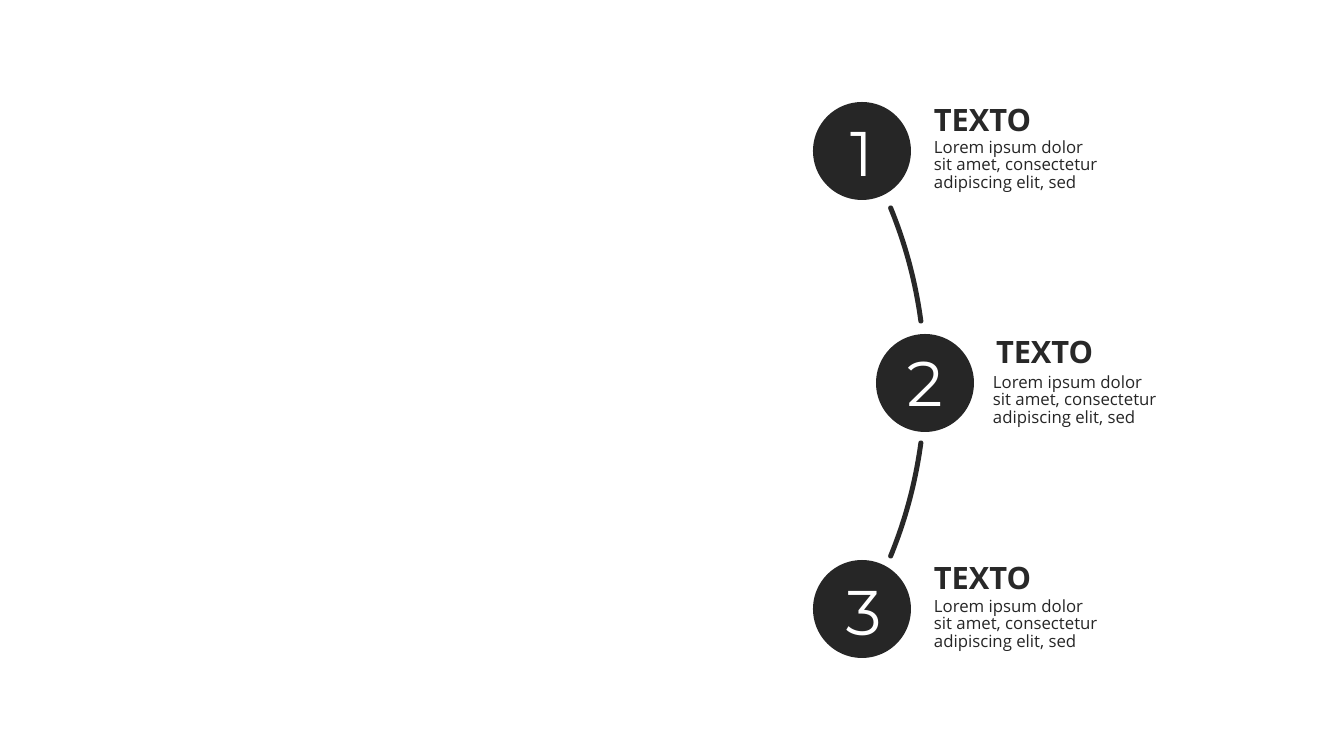
"""Build a slide with three numbered steps joined by a curved line."""
from math import asin, cos, pi, sin

from pptx import Presentation
from pptx.dml.color import RGBColor
from pptx.enum.shapes import MSO_SHAPE as Shape
from pptx.util import Pt

PX = 914400 / 100.8
COLORS = {"ink": "262626", "title": "282828", "number": "FFFFFF"}
FORMATS = {
    "body": {"name": "Open Sans", "size": Pt(12), "bold": False},
    "title": {"name": "Open Sans", "size": Pt(22), "bold": True},
    "number": {"name": "Montserrat", "size": Pt(45), "bold": False},
}
BODY = "Lorem ipsum dolor sit amet, consectetur adipiscing elit, sed"


def paint(shape, color):
    shape.shadow.inherit = False
    shape.fill.solid()
    shape.fill.fore_color.rgb = RGBColor.from_string(COLORS[color])
    shape.line.fill.background()


def write(words, box, style, color, inset_x=0, inset_y=0, spacing=1.0):
    label = slide.shapes.add_textbox(*[round(side * PX) for side in box])
    frame = label.text_frame
    insets = {
        "word_wrap": True,
        "margin_left": round(inset_x * PX),
        "margin_right": round(inset_x * PX),
        "margin_top": round(inset_y * PX),
        "margin_bottom": round(inset_y * PX),
    }
    for key, value in insets.items():
        setattr(frame, key, value)
    paragraph = frame.paragraphs[0]
    paragraph.line_spacing = spacing
    run = paragraph.add_run()
    run.text = words
    for key, value in FORMATS[style].items():
        setattr(run.font, key, value)
    run.font.color.rgb = RGBColor.from_string(COLORS[color])


deck = Presentation()
deck.slide_width, deck.slide_height = round(1344 * PX), round(756 * PX)
slide = deck.slides.add_slide(deck.slide_layouts[6])

steps = [
    ("1", (813, 102), (850, 113), (934, 101), (924, 134)),
    ("2", (876, 334), (907, 343), (996, 333), (983, 369)),
    ("3", (813, 560), (846, 572), (934, 559), (924, 593)),
]
for number, disc_at, number_at, title_at, body_at in steps:
    write(BODY, (*body_at, 187, 71), "body", "ink", 10, 5, 0.88)
    write("TEXTO", (*title_at, 163, 50), "title", "title")
    disc = slide.shapes.add_shape(
        Shape.OVAL, *[round(side * PX) for side in (*disc_at, 98, 98)]
    )
    paint(disc, "ink")
    write(number, (*number_at, 73, 93), "number", "number")

center_x, center_y, radius, half_width = 466, 382, 459, 2.5
near, far = asin(61 / radius), asin(174 / radius)
arc_steps, cap_steps = 24, 8
angles = [near + (far - near) * i / arc_steps for i in range(arc_steps + 1)]
turns = [pi * i / cap_steps for i in range(1, cap_steps)]

band = [(radius + half_width, angle, 0) for angle in angles]
band += [(radius + half_width * cos(t), far, half_width * sin(t)) for t in turns]
band += [(radius - half_width, angle, 0) for angle in reversed(angles)]
band += [(radius - half_width * cos(t), near, -half_width * sin(t)) for t in turns]

for side in (-1, 1):
    outline = [
        (
            round((center_x + reach * cos(angle) - shift * sin(angle)) * PX),
            round((center_y + side * (reach * sin(angle) + shift * cos(angle))) * PX),
        )
        for reach, angle, shift in band
    ]
    builder = slide.shapes.build_freeform(*outline[0], scale=1.0)
    builder.add_line_segments(outline[1:], close=True)
    paint(builder.convert_to_shape(), "title")

deck.save("out.pptx")
